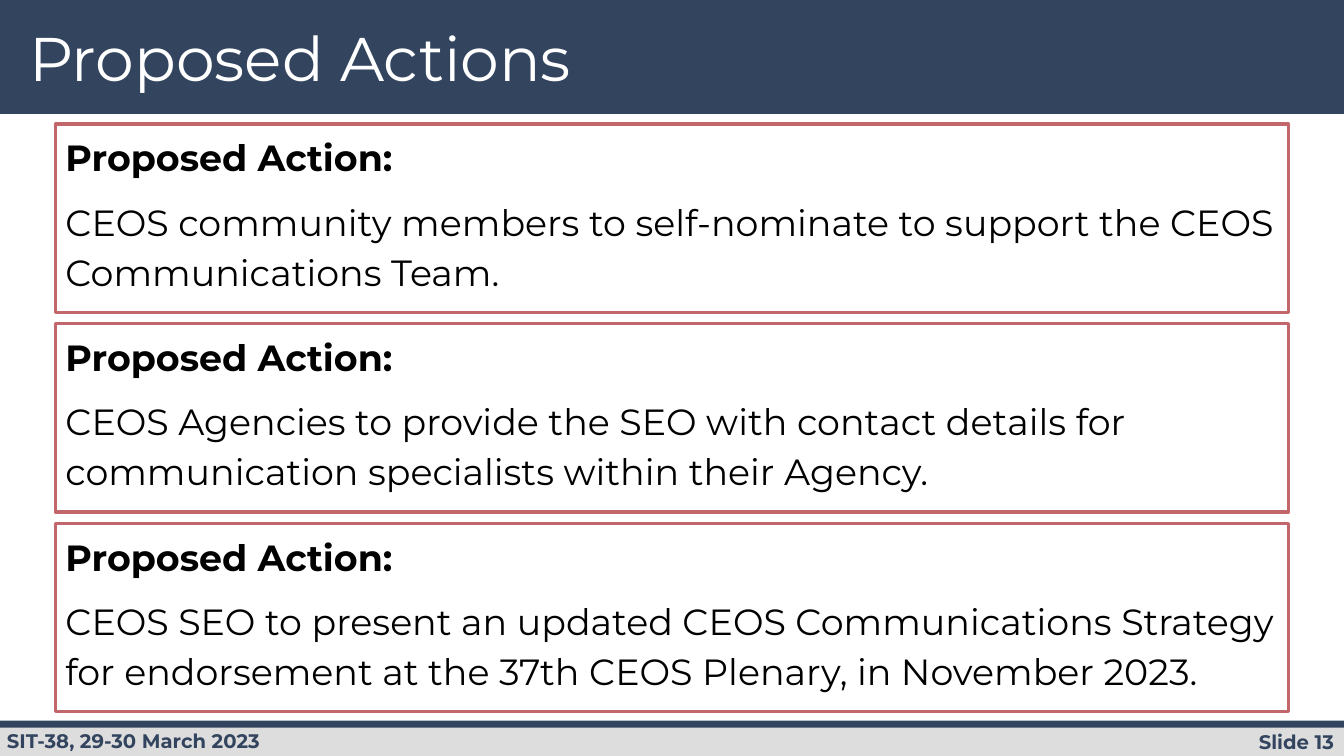
import dataclasses

import pptx
import pptx.dml.color
import pptx.enum.shapes
import pptx.enum.text
import pptx.util
from pptx.util import Inches

ALIGN = pptx.enum.text.PP_ALIGN
ANCHOR = pptx.enum.text.MSO_ANCHOR


@dataclasses.dataclass(frozen=True)
class Theme:
    font: str = "Montserrat"
    navy: str = "33445F"
    grey: str = "DDDDDD"
    red: str = "C1666B"
    white: str = "FFFFFF"
    black: str = "000000"
    title_size: int = 44
    body_size: int = 26
    footer_size: int = 14
    outline: float = 2.25


THEME = Theme()
ACTIONS = [
    "CEOS community members to self-nominate to support the CEOS Communications Team.",
    "CEOS Agencies to provide the SEO with contact details for "
    "communication specialists within their Agency.",
    "CEOS SEO to present an updated CEOS Communications Strategy "
    "for endorsement at the 37th CEOS Plenary, in November 2023.",
]


def color(code):
    return pptx.dml.color.RGBColor.from_string(code)


def add_box(page, left, top, width, height, fill=None, line=None):
    box = page.shapes.add_shape(
        pptx.enum.shapes.MSO_SHAPE.RECTANGLE,
        Inches(left), Inches(top), Inches(width), Inches(height))
    box.shadow.inherit = False
    if fill:
        box.fill.solid()
        box.fill.fore_color.rgb = color(fill)
    else:
        box.fill.background()
    if line:
        box.line.color.rgb = color(line)
        box.line.width = pptx.util.Pt(THEME.outline)
    else:
        box.line.fill.background()
    return box


def add_text_box(page, left, top, width, height):
    return page.shapes.add_textbox(
        Inches(left), Inches(top), Inches(width), Inches(height))


def write(para, text, size, fill, bold=False, align=ALIGN.LEFT, spacing=1.0, before=0):
    para.alignment = align
    para.line_spacing = spacing
    para.space_before = pptx.util.Pt(before)
    span = para.add_run()
    span.text = text
    span.font.name = THEME.font
    span.font.size = pptx.util.Pt(size)
    span.font.bold = bold
    span.font.color.rgb = color(fill)


def add_header(page, left, top, width, height, title):
    add_box(page, left, top, width, height, fill=THEME.navy)
    frame = add_text_box(page, left + 0.19, top + 0.19, 10.27, 0.85).text_frame
    frame.word_wrap = True
    frame.vertical_anchor = ANCHOR.MIDDLE
    write(frame.paragraphs[0], title, THEME.title_size, THEME.white, spacing=0.9)


def add_footer(page, left, top, width, height, event, number):
    add_box(page, left, top + 0.04, width, height - 0.04, fill=THEME.grey)
    add_box(page, left, top, width, 0.07, fill=THEME.navy)
    labels = [
        (event, left - 0.03, top + 0.03, 5.39, ALIGN.LEFT),
        (number, left + width - 2.11, top + 0.04, 2.11, ALIGN.RIGHT),
    ]
    for text, label_left, label_top, label_width, align in labels:
        frame = add_text_box(page, label_left, label_top, label_width, 0.34).text_frame
        frame.word_wrap = True
        write(frame.paragraphs[0], text, THEME.footer_size, THEME.navy,
              bold=True, align=align)


def add_actions(page, left, top, width, height, actions, gap=0.11):
    card_height = (height - gap * (len(actions) - 1)) / len(actions)
    for index, action in enumerate(actions):
        card_top = top + index * (card_height + gap)
        card = add_box(page, left, card_top, width, card_height, line=THEME.red)
        frame = card.text_frame
        frame.word_wrap = True
        frame.vertical_anchor = ANCHOR.TOP
        write(frame.paragraphs[0], "Proposed Action:", THEME.body_size, THEME.black,
              bold=True, spacing=1.15)
        write(frame.add_paragraph(), action, THEME.body_size, THEME.black,
              spacing=1.15, before=10)


def main():
    deck = pptx.Presentation()
    deck.slide_width = Inches(13.33)
    deck.slide_height = Inches(7.5)
    page = deck.slides.add_slide(deck.slide_layouts[6])
    add_header(page, 0, 0, 13.33, 1.13, "Proposed Actions")
    add_footer(page, 0, 7.15, 13.33, 0.35, "SIT-38, 29-30 March 2023", "Slide 13")
    add_actions(page, 0.55, 1.23, 12.23, 5.83, ACTIONS)
    deck.save("out.pptx")


if __name__ == "__main__":
    main()
